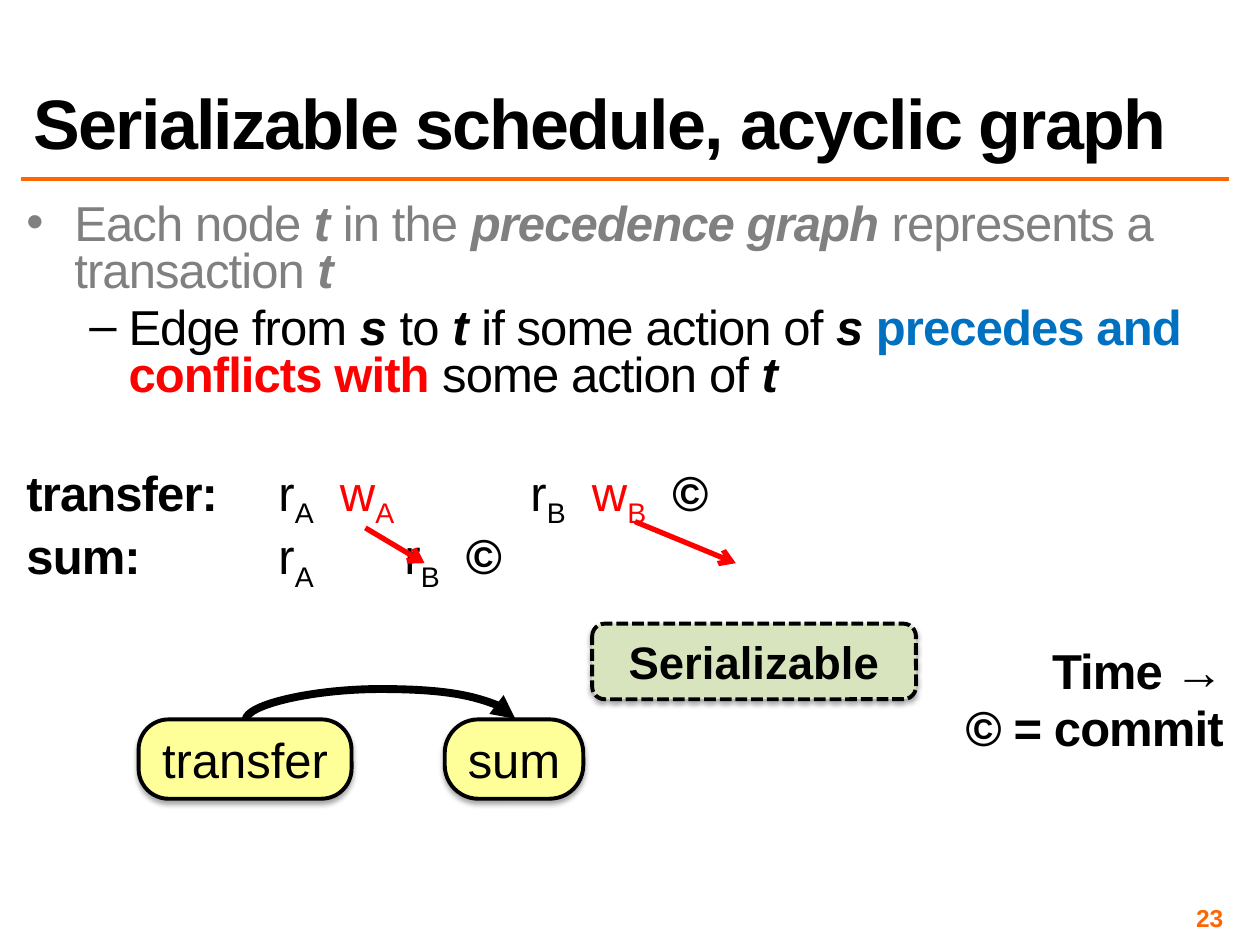
"""Build a slide on serializable schedules and their acyclic precedence graph."""
from lxml.etree import SubElement
from pptx import Presentation
from pptx.dml.color import RGBColor
from pptx.enum.dml import MSO_LINE as Dash
from pptx.enum.shapes import MSO_CONNECTOR as Link, MSO_SHAPE as Shape
from pptx.enum.text import MSO_ANCHOR as Anchor, PP_ALIGN as Align
from pptx.oxml.ns import qn
from pptx.util import Inches, Pt

BLACK = RGBColor(0x00, 0x00, 0x00)
GRAY = RGBColor(0x80, 0x80, 0x80)
ORANGE = RGBColor(0xFF, 0x66, 0x00)
BLUE = RGBColor(0x00, 0x70, 0xC0)
RED = RGBColor(0xFF, 0x00, 0x00)
YELLOW = RGBColor(0xFF, 0xFF, 0x99)
GREEN = RGBColor(0xD7, 0xE4, 0xBD)

WIDTH, HEIGHT = 10, 7.5
MARGIN, RIGHT = 0.17, 9.75
CONTENT = RIGHT - MARGIN
TIGHT = 0.04
TAB = 0.5
GAP, SECTION_GAP = 5.6, 38

TITLE = "Serializable schedule, acyclic graph"
PAGE = "23"
BODY = [
    dict(color=GRAY, bullet="•", indent=(0.38, -0.38), runs=[
        ("Each node ", ""), ("t", "bi"), (" in the ", ""),
        ("precedence graph ", "bi"), ("represents a transaction ", ""), ("t", "bi")]),
    dict(bullet="–", level=1, indent=(0.81, -0.31), runs=[
        ("Edge from ", ""), ("s", "bi"), (" to ", ""), ("t", "bi"),
        (" if some action of ", ""), ("s ", "bi"), ("precedes and ", "b", BLUE),
        ("conflicts with ", "b", RED), ("some action of ", ""), ("t", "bi")]),
    dict(before=SECTION_GAP, runs=[
        ("transfer:", "b"), ("\tr", ""), ("A", "_"), ("  ", ""), ("w", "", RED),
        ("A", "_", RED), ("  \t\tr", ""), ("B", "_"), ("  ", ""), ("w", "", RED),
        ("B", "_", RED), ("  ", ""), ("©", "b")]),
    dict(runs=[
        ("sum:", "b"), ("\t\t\tr", ""), ("A", "_"), ("\t\tr", ""), ("B", "_"),
        ("  ", ""), ("©", "b")]),
    dict(before=SECTION_GAP, align=Align.RIGHT, runs=[("Time →", "b")]),
    dict(align=Align.RIGHT, runs=[("© = commit", "b")]),
]
NODE_TOP, NODE_HEIGHT = 5.71, 0.63
NODES = [("transfer", 1.1, 1.69, 0.379), ("sum", 3.53, 1.1, 0.424)]
CONFLICTS = [((2.9, 4.19), (3.37, 4.47)), ((5.04, 4.14), (5.84, 4.47))]
EDGE_START, EDGE_END, EDGE_RISE, EDGE_DEPTH = 1.95, 4.09, 0.25, 0.01
VERDICT = ("Serializable", (4.7, 4.95, 2.57, 0.6))


def inches(values):
    return [Inches(value) for value in values]


def add_run(paragraph, text, size, style="", color=BLACK, spacing=0):
    run = paragraph.add_run()
    run.text = text
    font = run.font
    font.name, font.size = "Arial", Pt(size)
    font.bold, font.italic = "b" in style, "i" in style
    font.color.rgb = color
    properties = run._r.get_or_add_rPr()
    if spacing:
        properties.set("spc", str(int(spacing * 100)))
    if "_" in style:
        properties.set("baseline", "-25000")


def add_text(slide, box, anchor=Anchor.TOP, inset=None):
    frame = slide.shapes.add_textbox(*inches(box)).text_frame
    frame.word_wrap = True
    frame.vertical_anchor = anchor
    if inset is not None:
        frame.margin_left = frame.margin_right = Inches(inset)
        frame.margin_top = frame.margin_bottom = Inches(inset)
    return frame


def add_body(frame):
    for number, item in enumerate(BODY):
        paragraph = frame.add_paragraph() if number else frame.paragraphs[0]
        paragraph.level = item.get("level", 0)
        paragraph.alignment = item.get("align", Align.LEFT)
        paragraph.line_spacing = 0.8
        paragraph.space_before = Pt(item.get("before", GAP))
        properties = paragraph._p.get_or_add_pPr()
        left, first = inches(item.get("indent", (0, 0)))
        properties.set("marL", str(left))
        properties.set("indent", str(first))
        properties.set("defTabSz", str(Inches(TAB)))
        if "bullet" in item:
            SubElement(properties, qn("a:buFont"), typeface="Arial")
            SubElement(properties, qn("a:buChar"), char=item["bullet"])
        for text, style, *color in item["runs"]:
            add_run(paragraph, text, 28, style,
                    color[0] if color else item.get("color", BLACK), -0.5)


def add_line(slide, start, end, color, width, head=None, kind=Link.STRAIGHT):
    line = slide.shapes.add_connector(kind, *inches(start + end))
    line.line.color.rgb = color
    line.line.width = Pt(width)
    if head:
        SubElement(line.line._get_or_add_ln(), qn("a:tailEnd"), type=head)
    SubElement(line._element.spPr, qn("a:effectLst"))
    return line


def add_edge(slide):
    middle, half = (EDGE_START + EDGE_END) / 2, (EDGE_END - EDGE_START) / 2
    left, top = middle - EDGE_DEPTH / 2, NODE_TOP - half
    edge = add_line(slide, (left, top), (left + EDGE_DEPTH, top + 2 * half),
                    BLACK, 4.5, "triangle", Link.CURVE)
    properties = edge._element.spPr
    frame = properties.find(qn("a:xfrm"))
    for name, value in (("rot", "5400000"), ("flipH", "1"), ("flipV", "1")):
        frame.set(name, value)
    guides = properties.find(qn("a:prstGeom")).find(qn("a:avLst"))
    bend = round(EDGE_RISE / EDGE_DEPTH * 100000)
    SubElement(guides, qn("a:gd"), name="adj1", fmla=f"val {bend}")


def add_box(slide, text, box, fill, size, style="", rounding=None, dash=None):
    shape = slide.shapes.add_shape(Shape.ROUNDED_RECTANGLE, *inches(box))
    if rounding:
        shape.adjustments[0] = rounding
    shape.fill.solid()
    shape.fill.fore_color.rgb = fill
    shape.line.color.rgb = BLACK
    shape.line.width = Pt(2.25)
    if dash:
        shape.line.dash_style = dash
    shape.shadow.inherit = False
    effects = shape._element.spPr.find(qn("a:effectLst"))
    shadow = SubElement(effects, qn("a:outerShdw"), blurRad=str(Pt(3.1)),
                        dist=str(Pt(1.8)), dir="5400000", rotWithShape="0")
    tint = SubElement(shadow, qn("a:srgbClr"), val=str(BLACK))
    SubElement(tint, qn("a:alpha"), val="35000")
    shape.text_frame.vertical_anchor = Anchor.MIDDLE
    paragraph = shape.text_frame.paragraphs[0]
    paragraph.alignment = Align.CENTER
    add_run(paragraph, text, size, style)


def main():
    deck = Presentation()
    deck.slide_width, deck.slide_height = inches((WIDTH, HEIGHT))
    slide = deck.slides.add_slide(deck.slide_layouts[6])

    add_line(slide, (MARGIN, 1.42), (RIGHT, 1.42), ORANGE, 2)
    add_body(add_text(slide, (MARGIN, 1.58, CONTENT, 5.5), inset=TIGHT))

    page = add_text(slide, (7.42, 7.17, 2.33, 0.23), Anchor.MIDDLE, TIGHT).paragraphs[0]
    page.alignment = Align.RIGHT
    add_run(page, PAGE, 14, "b", ORANGE)

    title = add_text(slide, (MARGIN, 0.17, CONTENT, 1.17), Anchor.BOTTOM).paragraphs[0]
    title.line_spacing = 0.8
    add_run(title, TITLE, 40, "b", spacing=-1)

    for text, left, width, rounding in NODES:
        add_box(slide, text, (left, NODE_TOP, width, NODE_HEIGHT), YELLOW, 28,
                rounding=rounding)
    for start, end in CONFLICTS:
        add_line(slide, start, end, RED, 3, "arrow")
    add_edge(slide)
    add_box(slide, *VERDICT, GREEN, 26, "b", dash=Dash.SQUARE_DOT)
    deck.save("out.pptx")


if __name__ == "__main__":
    main()
